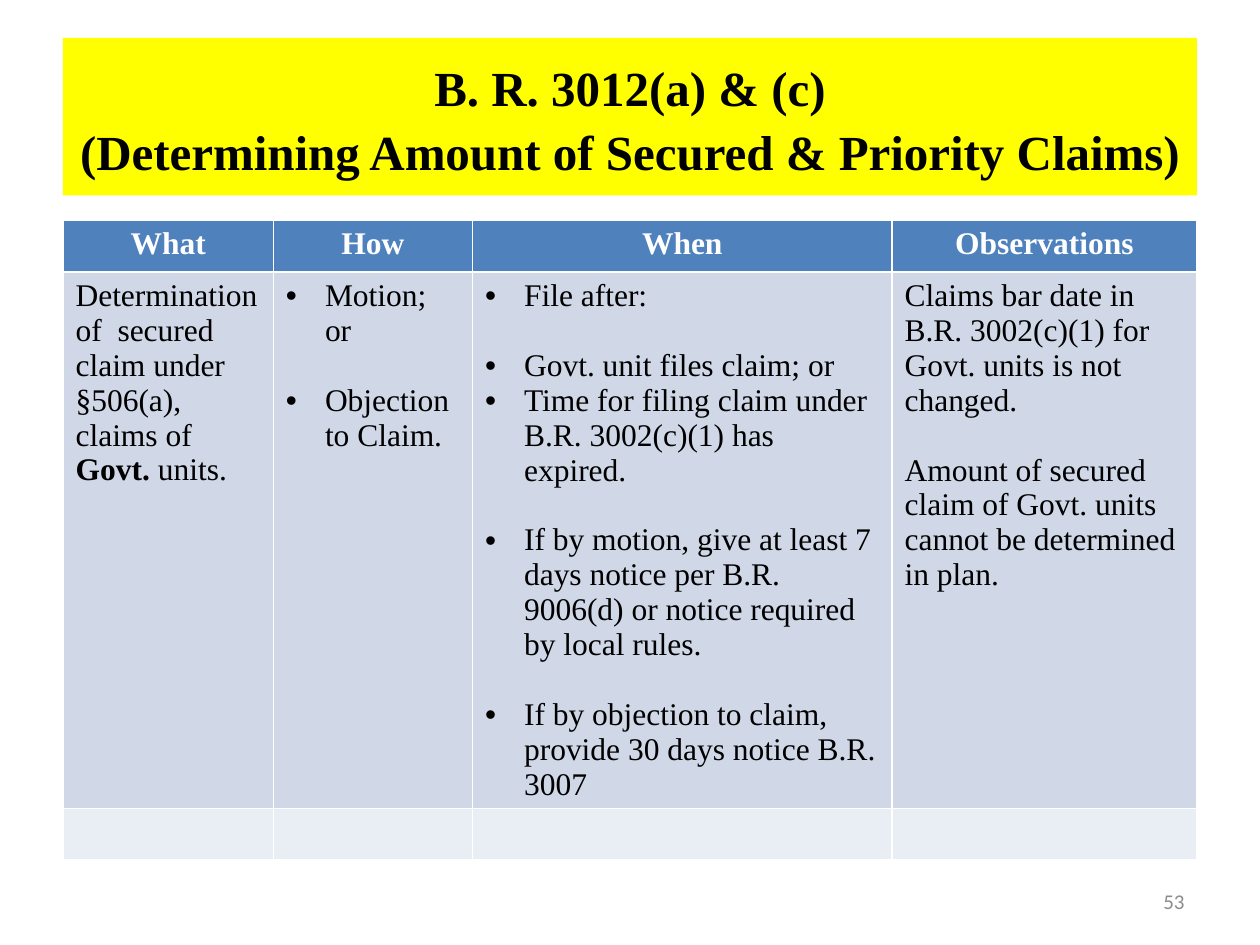
from lxml import etree
from pptx import Presentation
from pptx.dml.color import RGBColor
from pptx.enum import shapes, text
from pptx.oxml.ns import qn
from pptx.util import Inches, Pt

COLORS = {"title": "FFFF00", "header": "4F81BD", "band": "D0D8E8", "light": "E9EDF4",
          "black": "000000", "white": "FFFFFF", "gray": "8C8C8C"}
FONT = "Times New Roman"
LEFT = 0.5
WIDTHS = [1.67, 1.58, 3.33, 2.42]
HEIGHTS = [0.41, 4.25, 0.41]
LINE_GAP = 20

TITLE = "B. R. 3012(a) & (c)\v(Determining Amount of Secured & Priority Claims)"
PAGE = "53"
HEADERS = ["What", "How", "When", "Observations"]
BULLETED = {"How", "When"}
# Each entry: (gap above, runs); each run: (text, bold)
BODY = {
    "What": [(False, [("Determination of  secured claim under §506(a), claims of ", False),
                      ("Govt. ", True), ("units.", False)])],
    "How": [(False, [("Motion; or", False)]),
            (True, [("Objection to Claim.", False)])],
    "When": [(False, [("File after:", False)]),
             (True, [("Govt. unit files claim; or", False)]),
             (False, [("Time for filing claim under B.R. 3002(c)(1) has expired.", False)]),
             (True, [("If by motion, give at least 7 days notice per B.R. 9006(d) "
                      "or notice required by local rules.", False)]),
             (True, [("If by objection to claim, provide 30 days notice B.R. 3007", False)])],
    "Observations": [(False, [("Claims bar date in B.R. 3002(c)(1) for Govt. units "
                               "is not changed.", False)]),
                     (True, [("Amount of secured claim of Govt. units cannot be "
                              "determined in plan.", False)])],
}


def rgb(name):
    return RGBColor.from_string(COLORS[name])


def style(p, size, color, bold=None, align=None, font=FONT):
    p.font.name, p.font.size, p.font.bold = font, Pt(size), bold
    p.font.color.rgb = rgb(color)
    p.alignment = align


def add_bullet(p):
    pPr = p._p.get_or_add_pPr()
    indent = Inches(0.31)
    pPr.set("marL", str(indent))
    pPr.set("indent", str(-indent))
    font = etree.Element(qn("a:buFont"), typeface="Arial")
    char = etree.Element(qn("a:buChar"), char="•")
    at = 0 if pPr.find(qn("a:spcBef")) is None else 1
    pPr.insert(at, font)
    pPr.insert(at + 1, char)


def fill_body(cell, paragraphs, bulleted):
    tf = cell.text_frame
    for i, (gap, runs) in enumerate(paragraphs):
        p = tf.paragraphs[0] if i == 0 else tf.add_paragraph()
        style(p, 18, "black")
        if gap:
            p.space_before = Pt(LINE_GAP)
        for words, bold in runs:
            r = p.add_run()
            r.text, r.font.bold = words, bold
        if bulleted:
            add_bullet(p)


def add_title(s):
    sp = s.shapes.add_shape(shapes.MSO_SHAPE.RECTANGLE, Inches(LEFT), Inches(0.3),
                            Inches(sum(WIDTHS)), Inches(1.25))
    sp.shadow.inherit = False
    sp.fill.solid()
    sp.fill.fore_color.rgb = rgb("title")
    sp.line.fill.background()
    tf = sp.text_frame
    tf.word_wrap = True
    tf.vertical_anchor = text.MSO_ANCHOR.MIDDLE
    p = tf.paragraphs[0]
    p.text = TITLE
    p.line_spacing = 1.08
    style(p, 28, "black", True, text.PP_ALIGN.CENTER)


def add_claims_table(s):
    table = s.shapes.add_table(len(HEIGHTS), len(WIDTHS), Inches(LEFT), Inches(1.75),
                               Inches(sum(WIDTHS)), Inches(sum(HEIGHTS))).table
    for column, width in zip(table.columns, WIDTHS):
        column.width = Inches(width)
    for row, height, color in zip(table.rows, HEIGHTS, ("header", "band", "light")):
        row.height = Inches(height)
        for cell in row.cells:
            cell.fill.solid()
            cell.fill.fore_color.rgb = rgb(color)
    for col, header in enumerate(HEADERS):
        p = table.cell(0, col).text_frame.paragraphs[0]
        p.text = header
        style(p, 18, "white", True, text.PP_ALIGN.CENTER)
        fill_body(table.cell(1, col), BODY[header], header in BULLETED)


def add_page_number(s):
    tf = s.shapes.add_textbox(Inches(7.17), Inches(6.95), Inches(2.33), Inches(0.4)).text_frame
    tf.word_wrap = True
    tf.vertical_anchor = text.MSO_ANCHOR.MIDDLE
    p = tf.paragraphs[0]
    p.text = PAGE
    style(p, 12, "gray", align=text.PP_ALIGN.RIGHT, font="Calibri")


def main():
    prs = Presentation()
    prs.slide_width, prs.slide_height = Inches(10), Inches(7.5)
    s = prs.slides.add_slide(prs.slide_layouts[6])
    add_title(s)
    add_claims_table(s)
    add_page_number(s)
    prs.save("out.pptx")


if __name__ == "__main__":
    main()
